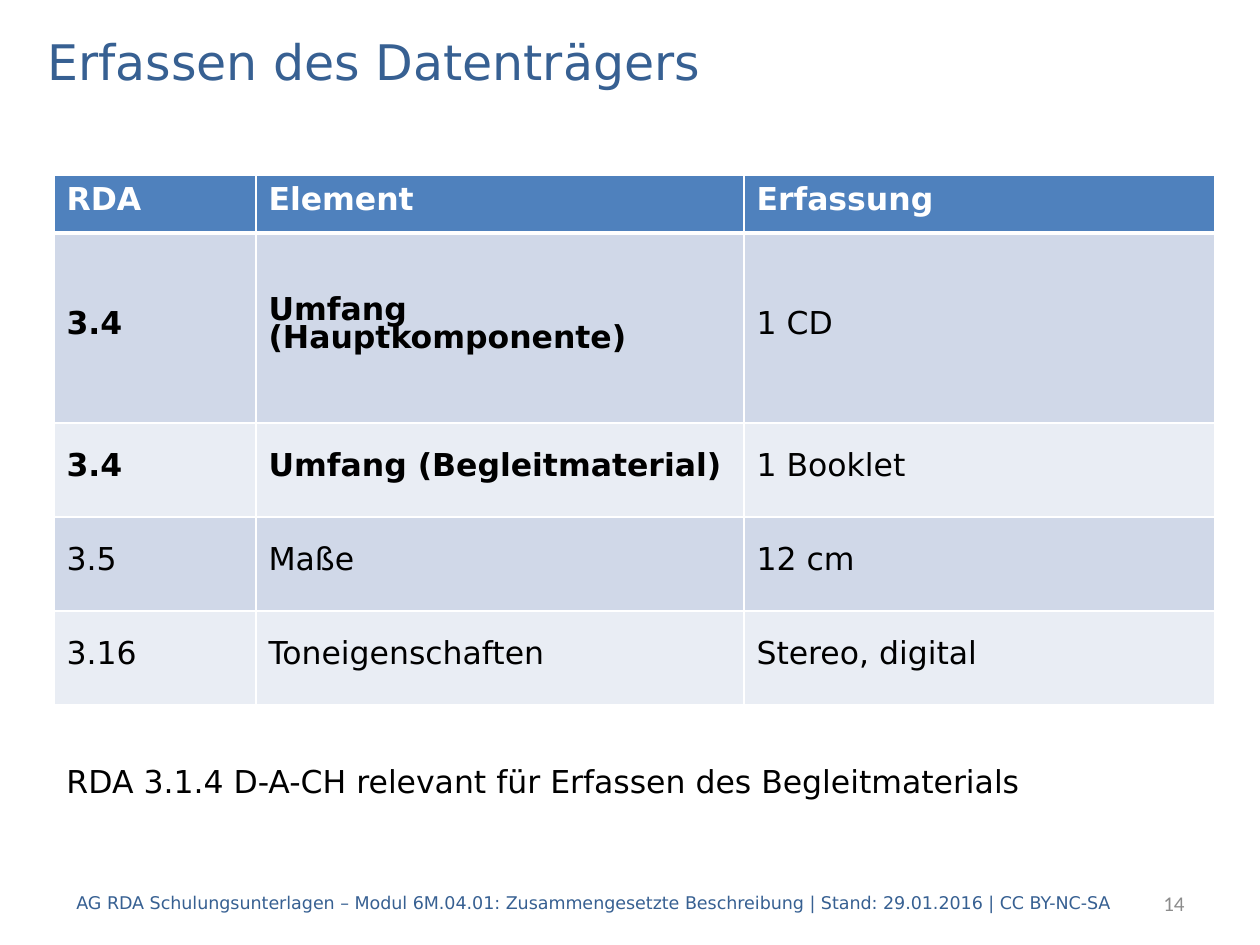
"""Build the slide on recording the data carrier as an RDA element table."""
from lxml.etree import SubElement
from pptx import Presentation
from pptx.dml.color import RGBColor
from pptx.enum.text import MSO_ANCHOR as Anchor, PP_ALIGN as Align
from pptx.oxml.ns import qn
from pptx.util import Pt

PX = 914400 // 126
COLORS = {"blue": "376092", "header": "4F81BD", "odd": "D0D8E8", "even": "E9EDF4",
          "white": "FFFFFF", "black": "000000", "gray": "8C8C8C"}
SANS = "DejaVu Sans"

TITLE = ("Erfassen des Datenträgers", (35, 25, 1191, 71),
         {"size": 28, "color": "blue"})
NOTES = [
    ("RDA 3.1.4 D-A-CH relevant für Erfassen des Begleitmaterials",
     (54, 745, 1191, 71), {"size": 18}),
    ("AG RDA Schulungsunterlagen – Modul 6M.04.01: Zusammengesetzte Beschreibung"
     " | Stand: 29.01.2016 | CC BY-NC-SA",
     (64, 878, 1101, 50), {"size": 10, "color": "blue"}),
    ("14", (997, 878, 200, 50),
     {"size": 12, "color": "gray", "font": "Calibri", "align": Align.RIGHT}),
]
ELEMENTS = [
    ("RDA", "Element", "Erfassung"),
    ("3.4", "Umfang (Hauptkomponente)", "1 CD"),
    ("3.4", "Umfang (Begleitmaterial)", "1 Booklet"),
    ("3.5", "Maße", "12 cm"),
    ("3.16", "Toneigenschaften", "Stereo, digital"),
]
CORE_ROWS = (1, 2)
TABLE_ORIGIN = (54, 175)
COLUMN_WIDTHS = (202, 488, 471)
ROW_HEIGHTS = (58, 190, 94, 94, 94)
BODY_SPACING = {"line_spacing": Pt(16), "space_before": Pt(6), "space_after": Pt(6)}


def rgb(name):
    return RGBColor.from_string(COLORS[name])


def write(frame, text, size=18, color="black", font=SANS, bold=False,
          align=Align.LEFT, spacing=None):
    paragraph = frame.paragraphs[0]
    for name, value in {"alignment": align, **(spacing or {})}.items():
        setattr(paragraph, name, value)
    run = paragraph.add_run()
    run.text = text
    for name, value in {"size": Pt(size), "name": font, "bold": bold}.items():
        setattr(run.font, name, value)
    run.font.color.rgb = rgb(color)


def place(box, text, bounds, style):
    for name, value in zip(("left", "top", "width", "height"), bounds):
        setattr(box, name, value * PX)
    frame = box.text_frame
    frame.word_wrap = True
    frame.vertical_anchor = Anchor.MIDDLE
    write(frame, text, **style)


def add_borders(cell, top, bottom):
    properties = cell._tc.get_or_add_tcPr()
    for side, points in {"L": 1, "R": 1, "T": top, "B": bottom}.items():
        line = SubElement(properties, qn(f"a:ln{side}"), w=str(Pt(points)))
        fill = SubElement(line, qn("a:solidFill"))
        SubElement(fill, qn("a:srgbClr"), val=COLORS["white"])


def add_elements(slide):
    left, top = (value * PX for value in TABLE_ORIGIN)
    table = slide.shapes.add_table(
        len(ELEMENTS), len(COLUMN_WIDTHS), left, top,
        sum(COLUMN_WIDTHS) * PX, sum(ROW_HEIGHTS) * PX).table
    for column, width in zip(table.columns, COLUMN_WIDTHS):
        column.width = width * PX
    for row, height in zip(table.rows, ROW_HEIGHTS):
        row.height = height * PX
    for r, entries in enumerate(ELEMENTS):
        header = r == 0
        shade = "header" if header else ("even", "odd")[r % 2]
        for c, text in enumerate(entries):
            cell = table.cell(r, c)
            add_borders(cell, top=3 if r == 1 else 1, bottom=3 if header else 1)
            cell.fill.solid()
            cell.fill.fore_color.rgb = rgb(shade)
            cell.vertical_anchor = Anchor.TOP if header else Anchor.MIDDLE
            write(cell.text_frame, text,
                  color="white" if header else "black",
                  bold=header or (r in CORE_ROWS and c < 2),
                  spacing=None if header else BODY_SPACING)


def main():
    deck = Presentation()
    deck.slide_width, deck.slide_height = 1260 * PX, 945 * PX
    slide = deck.slides.add_slide(deck.slide_layouts[5])
    place(slide.shapes.title, *TITLE)
    add_elements(slide)
    for text, bounds, style in NOTES:
        place(slide.shapes.add_textbox(0, 0, 0, 0), text, bounds, style)
    deck.save("out.pptx")


if __name__ == "__main__":
    main()
